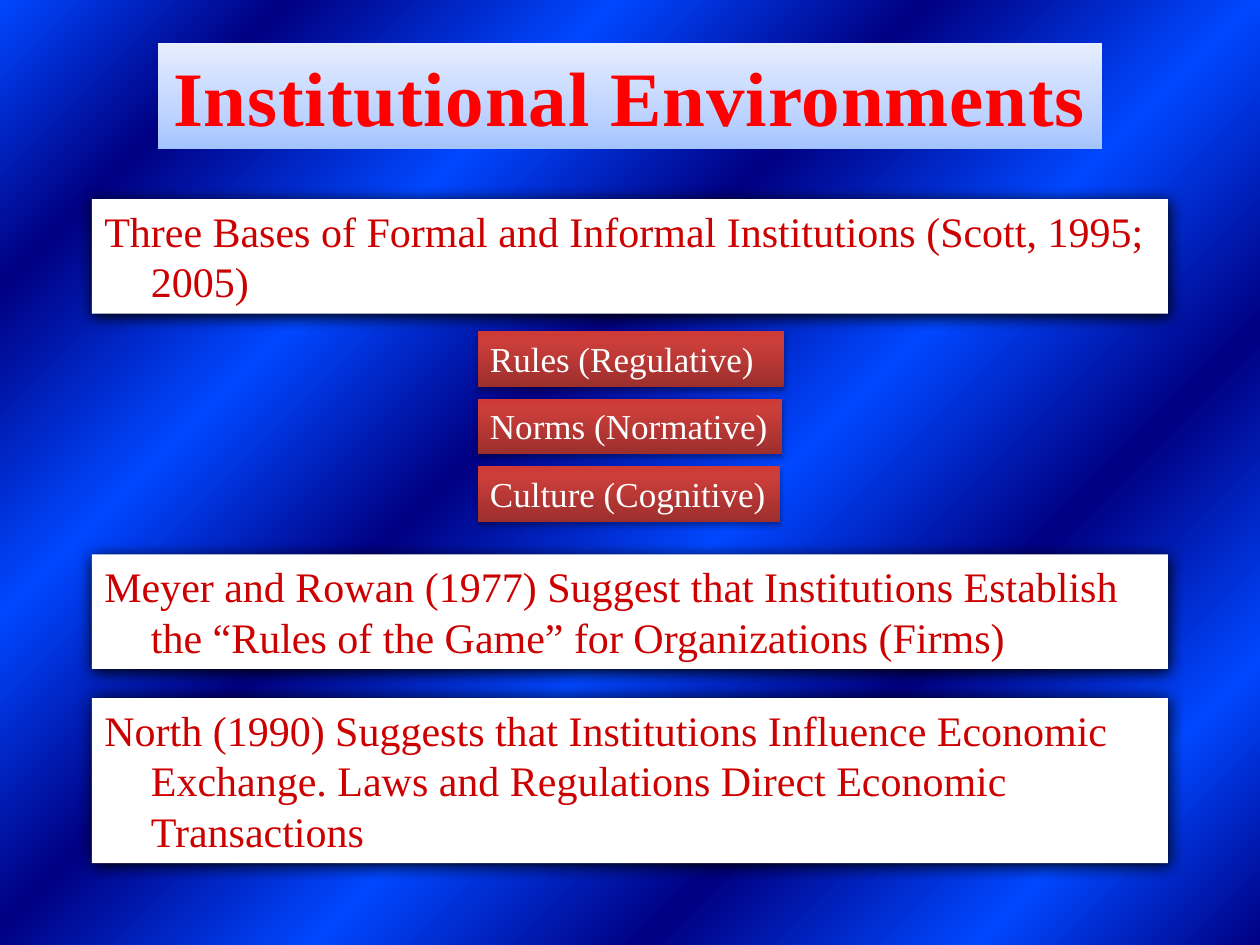
from dataclasses import dataclass
from lxml import etree
from pptx import Presentation, util as u
from pptx.dml.color import RGBColor
from pptx.enum import text
from pptx.oxml import ns

COLORS = {"title": "FF0000", "statement": "CC0000", "label": "FFFFFF",
          "panel": "FFFFFF", "shadow": "000000", "navy": "000082", "blue": "0047FF"}
BACKDROP = [(stop, COLORS["blue" if i % 2 else "navy"])
            for i, stop in enumerate((0, 13, 28, 43, 58, 72, 87, 100))]
PALE_BLUE = [(0, "A4C4FF"), (35, "BFD4FF"), (100, "E6EEFF")]
BRICK = [(0, "9C2F2D"), (80, "CB3E3A"), (100, "CE3B37")]
FONT = "Times New Roman"
COLUMNS, ROWS = 100, 75
CELL = u.Inches(0.1)


@dataclass
class Shadow:
    opacity: int
    blur: float
    distance: float


@dataclass
class Panel:
    words: str
    left: float
    top: float
    width: float
    height: float
    size: int
    color: str
    shadow: Shadow
    stops: list | None = None
    hanging: float = 0
    wrap: bool = True


def cells(count: float) -> int:
    return round(count * CELL)


def add_node(parent, tag: str, **attributes):
    return etree.SubElement(parent, ns.qn(tag), {k: str(v) for k, v in attributes.items()})


def paint_gradient(fill, properties, stops: list, angle: int) -> None:
    fill.solid()
    solid = properties.find(ns.qn("a:solidFill"))
    gradient = etree.Element(ns.qn("a:gradFill"), rotWithShape="1")
    stop_list = add_node(gradient, "a:gsLst")
    for position, color in stops:
        stop = add_node(stop_list, "a:gs", pos=position * 1000)
        add_node(stop, "a:srgbClr", val=color)
    add_node(gradient, "a:lin", ang=angle * 60000, scaled=0)
    properties.replace(solid, gradient)


def cast_shadow(box, shadow: Shadow) -> None:
    effects = add_node(box.element.spPr, "a:effectLst")
    outer = add_node(effects, "a:outerShdw", blurRad=u.Pt(shadow.blur),
                     dist=u.Pt(shadow.distance), dir=90 * 60000, rotWithShape=0)
    color = add_node(outer, "a:srgbClr", val=COLORS["shadow"])
    add_node(color, "a:alpha", val=shadow.opacity * 1000)


def write(para, words: str, size: int, color: str):
    span = para.add_run()
    span.text = words
    span.font.name = FONT
    span.font.size = u.Pt(size)
    span.font.color.rgb = RGBColor.from_string(COLORS[color])
    return span


def draw_title(page, words: str) -> None:
    box = page.shapes.title
    width = 74.9
    box.left, box.top = cells((COLUMNS - width) / 2), cells(3.4)
    box.width, box.height = cells(width), cells(8.4)
    paint_gradient(box.fill, box.element.spPr, PALE_BLUE, 270)
    frame = box.text_frame
    frame.word_wrap = True
    frame.auto_size = text.MSO_AUTO_SIZE.SHAPE_TO_FIT_TEXT
    para = frame.paragraphs[0]
    para.alignment = text.PP_ALIGN.CENTER
    span = write(para, words, 44, "title")
    span.font.bold = True
    span.font._element.set("spc", "50")


def draw_panel(page, panel: Panel) -> None:
    box = page.shapes.add_textbox(cells(panel.left), cells(panel.top),
                                  cells(panel.width), cells(panel.height))
    if panel.stops:
        paint_gradient(box.fill, box.element.spPr, panel.stops, 270)
    else:
        box.fill.solid()
        box.fill.fore_color.rgb = RGBColor.from_string(COLORS["panel"])
    cast_shadow(box, panel.shadow)
    frame = box.text_frame
    frame.word_wrap = panel.wrap
    frame.auto_size = text.MSO_AUTO_SIZE.SHAPE_TO_FIT_TEXT
    para = frame.paragraphs[0]
    if panel.hanging:
        indent = cells(panel.hanging)
        properties = para._p.get_or_add_pPr()
        properties.set("marL", str(indent))
        properties.set("indent", str(-indent))
    write(para, panel.words, panel.size, panel.color)


def statement(words: str, top: float, height: float) -> Panel:
    margin = 7.3
    return Panel(words, margin, top, COLUMNS - 2 * margin, height, 24, "statement",
                 Shadow(100, 8.5, 1), hanging=3.7)


def label(words: str, row: int, width: float, wrap: bool) -> Panel:
    return Panel(words, 37.9, 26.3 + 5.35 * row, width, 4.4, 20, "label",
                 Shadow(35, 3.1, 1.8), stops=BRICK, wrap=wrap)


PANELS = [
    statement("North (1990) Suggests that Institutions Influence Economic Exchange. "
              "Laws and Regulations Direct Economic Transactions", 55.4, 13.1),
    statement("Meyer and Rowan (1977) Suggest that Institutions Establish "
              "the “Rules of the Game” for Organizations (Firms)", 44, 9.1),
    statement("Three Bases of Formal and Informal Institutions (Scott, 1995; 2005)", 15.8, 9.1),
    label("Rules (Regulative)", 0, 24.3, True),
    label("Norms (Normative)", 1, 24.2, False),
    label("Culture (Cognitive)", 2, 24, False),
]


def main() -> None:
    deck = Presentation()
    deck.slide_width, deck.slide_height = cells(COLUMNS), cells(ROWS)
    page = deck.slides.add_slide(deck.slide_layouts.get_by_name("Title Only"))
    fill = page.background.fill
    fill.solid()
    paint_gradient(fill, page.element.find(".//" + ns.qn("p:bgPr")), BACKDROP, 225)
    draw_title(page, "Institutional Environments")
    for panel in PANELS:
        draw_panel(page, panel)
    deck.save("out.pptx")


if __name__ == "__main__":
    main()
